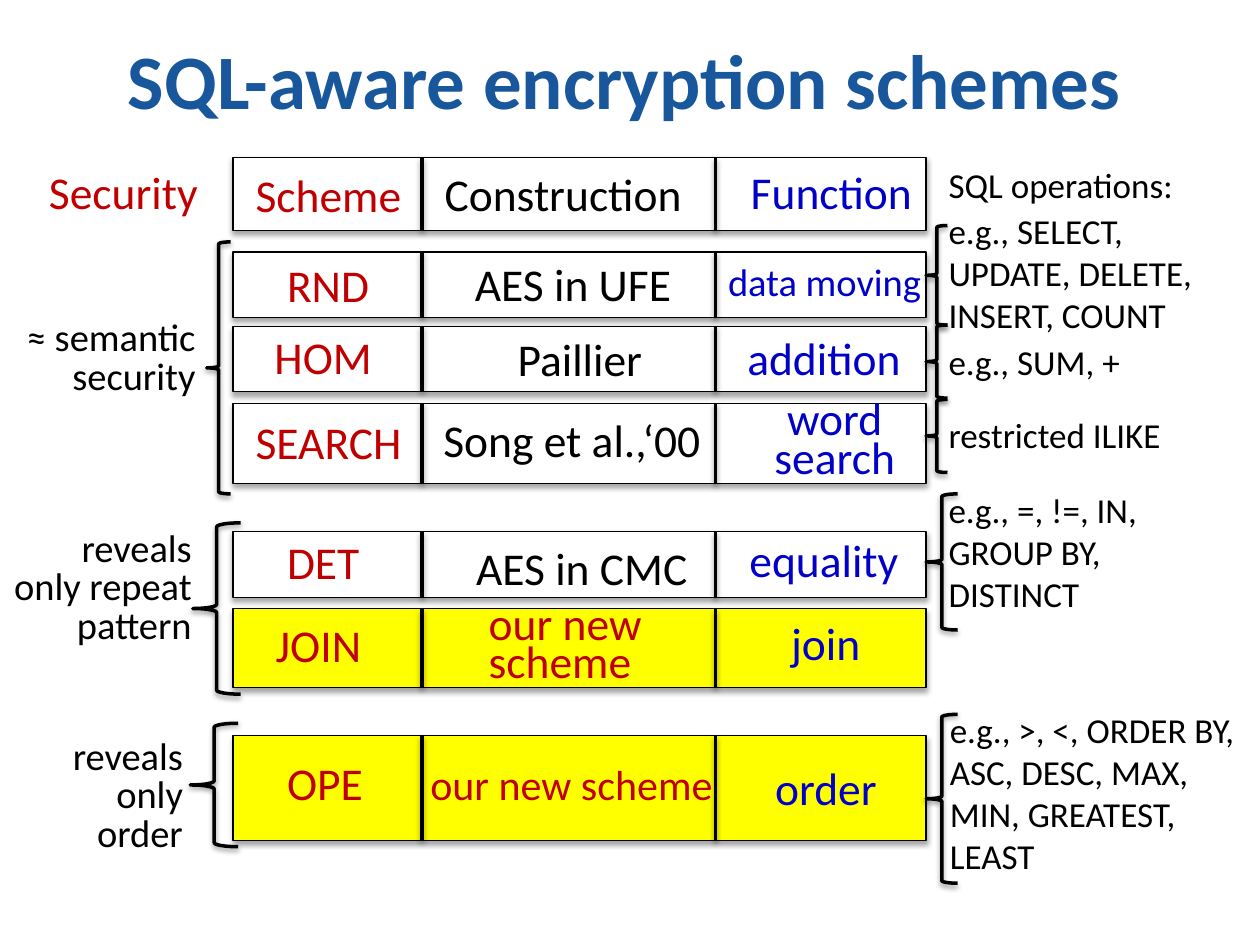
from dataclasses import dataclass
from typing import NamedTuple

from lxml import etree
from pptx import Presentation
from pptx import util as u
from pptx.dml import color
from pptx.enum import shapes, text
from pptx.oxml import ns

# The slide is a grid of 100 columns by 75 rows.
COLS, ROWS = 100, 75
CELL = u.Inches(0.1)
LEFT, WIDE = 18.5, 55
RULES = (33.5, 56.8)


@dataclass(frozen=True)
class Theme:
    font: str = "Calibri"
    title: str = "18579B"
    ink: str = "000000"
    red: str = "C00000"
    blue: str = "0000C8"
    plain: str = "FFFFFF"
    fresh: str = "FFFF00"
    head: float = 44
    large: float = 26
    mid: float = 24
    small: float = 22
    note: float = 20
    thin: float = 0.75
    thick: float = 2


T = Theme()
MID, RIGHT = text.PP_ALIGN.CENTER, text.PP_ALIGN.RIGHT


class Label(NamedTuple):
    words: str
    left: float
    top: float
    width: float
    height: float = 5.4
    size: float = T.large
    align: text.PP_ALIGN = text.PP_ALIGN.LEFT
    lead: float | None = None
    tint: str | None = None


class Row(NamedTuple):
    top: float
    height: float
    fill: str
    scheme: Label
    build: Label
    use: Label


class Brace(NamedTuple):
    left: float
    top: float
    width: float
    height: float


TABLE = [
    Row(12.5, 5.8, T.plain, Label("Scheme", 19.3, 12.8, 19.2),
        Label("Construction", 34.3, 12.7, 22.5), Label("Function", 58.6, 12.5, 19.2)),
    Row(20, 5.2, T.plain, Label("RND", 21.8, 19.9, 12),
        Label("AES in UFE", 36.7, 19.8, 20.8),
        Label("data moving", 56.8, 20, 24.7, 4.7, T.small)),
    Row(25.9, 5.2, T.plain, Label("HOM", 20.8, 25.6, 12),
        Label("Paillier", 40.1, 25.8, 18.3),
        Label("addition", 57.5, 25.7, 15.8, align=MID)),
    Row(32, 6.4, T.plain, Label("SEARCH", 19.3, 32.4, 14.5),
        Label("Song et al.,‘00", 34.2, 32.2, 23.5),
        Label("word search", 58.8, 31.6, 14.9, 7.6, align=MID, lead=22.8)),
    Row(42.2, 5.2, T.plain, Label("DET", 21.8, 41.9, 12),
        Label("AES in CMC", 36.8, 42.4, 21.7), Label("equality", 58.5, 41.7, 15)),
    Row(48.3, 6.3, T.fresh, Label("JOIN", 20.9, 48.5, 12),
        Label("our new scheme", 37.8, 48, 16.2, 7.4, lead=22, tint=T.red),
        Label("join", 61.8, 48.3, 10)),
    Row(58.4, 8.3, T.fresh, Label("OPE", 21.8, 59.4, 12),
        Label("our new scheme", 31.6, 60.4, 27.5, 4.4, T.mid, MID, 24, T.red),
        Label("order", 59.3, 59.8, 12.5, align=MID)),
]

NOTES = [
    Label("Security", 2.9, 12.5, 19.2, tint=T.red),
    Label("≈ semantic security", -2.4, 25, 18.9, 7.3, T.small, RIGHT, 22),
    Label("reveals only repeat pattern", -0.3, 41.7, 16.5, 10.3, T.small, RIGHT, 22),
    Label("reveals only order", 1.6, 58.2, 13.9, 10.4, T.small, RIGHT, 22),
    Label("SQL operations:", 74.3, 12.5, 20.7, 4.4, T.note),
    Label("e.g., SELECT, UPDATE, DELETE, INSERT, COUNT", 74.3, 16.1, 25.7, 11.1, T.note),
    Label("e.g., SUM, +", 74.3, 26.5, 25, 4.4, T.note),
    Label("restricted ILIKE", 74.3, 32.3, 25, 4.4, T.note),
    Label("e.g., =, !=, IN, GROUP BY, DISTINCT", 74.3, 38.3, 20.6, 11.1, T.note),
    Label("e.g., >, <, ORDER BY, ASC, DESC, MAX, MIN, GREATEST, LEAST",
          74.4, 55.7, 26.7, 14.5, T.note),
]

BRACES = [
    Brace(16.4, 19.2, 1.9, 20), Brace(15.3, 41.5, 3.8, 13.6),
    Brace(15.1, 57.4, 3.8, 9.8), Brace(73.5, 17.9, 1.7, 7.9),
    Brace(73.5, 25.8, 1.7, 5.8), Brace(73.5, 31.7, 1.7, 5.8),
    Brace(73.5, 39.2, 2.5, 10.8), Brace(73.5, 56.7, 2.5, 13.4),
]


def grid(*spans: float) -> list[int]:
    return [round(span * CELL) for span in spans]


def rgb(code: str) -> color.RGBColor:
    return color.RGBColor.from_string(code)


def shade(item, dist: float, alpha: int) -> None:
    """Cast a soft shadow straight down; call after the line is set."""
    props = item._element.spPr
    for old in props.findall(ns.qn("a:effectLst")):
        props.remove(old)
    effects = etree.SubElement(props, ns.qn("a:effectLst"))
    cast = etree.SubElement(effects, ns.qn("a:outerShdw"), blurRad=str(u.Pt(3.1)),
                            dist=str(u.Pt(dist)), dir="5400000", rotWithShape="0")
    tone = etree.SubElement(cast, ns.qn("a:srgbClr"), val=T.ink)
    etree.SubElement(tone, ns.qn("a:alpha"), val=str(alpha * 1000))


def stroke(item, width: float) -> None:
    item.line.color.rgb = rgb(T.ink)
    item.line.width = u.Pt(width)


def write(frame, words: str, *, size: float, tint: str, align: text.PP_ALIGN,
          lead: float | None = None, bold: bool = False) -> None:
    frame.word_wrap = True
    para = frame.paragraphs[0]
    para.alignment = align
    if lead:
        para.line_spacing = u.Pt(lead)
    run = para.add_run()
    run.text = words
    run.font.name, run.font.size, run.font.bold = T.font, u.Pt(size), bold
    run.font.color.rgb = rgb(tint)


def draw_label(slide, label: Label, tint: str) -> None:
    box = slide.shapes.add_textbox(
        *grid(label.left, label.top, label.width, label.height))
    write(box.text_frame, label.words, size=label.size, tint=label.tint or tint,
          align=label.align, lead=label.lead)


def draw_row(slide, row: Row) -> None:
    band = slide.shapes.add_shape(shapes.MSO_SHAPE.RECTANGLE,
                                  *grid(LEFT, row.top, WIDE, row.height))
    band.fill.solid()
    band.fill.fore_color.rgb = rgb(row.fill)
    stroke(band, T.thin)
    shade(band, 1.8, 35)
    for x in RULES:
        rule = slide.shapes.add_connector(
            shapes.MSO_CONNECTOR.STRAIGHT, *grid(x, row.top, x, row.top + row.height))
        stroke(rule, T.thick)
        shade(rule, 1.6, 38)
    for label, tint in zip((row.scheme, row.build, row.use), (T.red, T.ink, T.blue)):
        draw_label(slide, label, tint)


def draw_brace(slide, brace: Brace) -> None:
    mark = slide.shapes.add_shape(shapes.MSO_SHAPE.LEFT_BRACE, *grid(*brace))
    mark.fill.background()
    stroke(mark, T.thick)
    shade(mark, 1.6, 38)


def draw_title(slide, words: str) -> None:
    title = slide.shapes.title
    title.left, title.top, title.width, title.height = grid(2.5, 0, 94.2, 12.5)
    title.text_frame.vertical_anchor = text.MSO_ANCHOR.MIDDLE
    write(title.text_frame, words, size=T.head, tint=T.title, align=MID, bold=True)


def main() -> None:
    deck = Presentation()
    deck.slide_width, deck.slide_height = grid(COLS, ROWS)
    slide = deck.slides.add_slide(deck.slide_layouts.get_by_name("Title Only"))
    draw_title(slide, "SQL-aware encryption schemes")
    for row in TABLE:
        draw_row(slide, row)
    for brace in BRACES:
        draw_brace(slide, brace)
    for label in NOTES:
        draw_label(slide, label, T.ink)
    deck.save("out.pptx")


if __name__ == "__main__":
    main()
